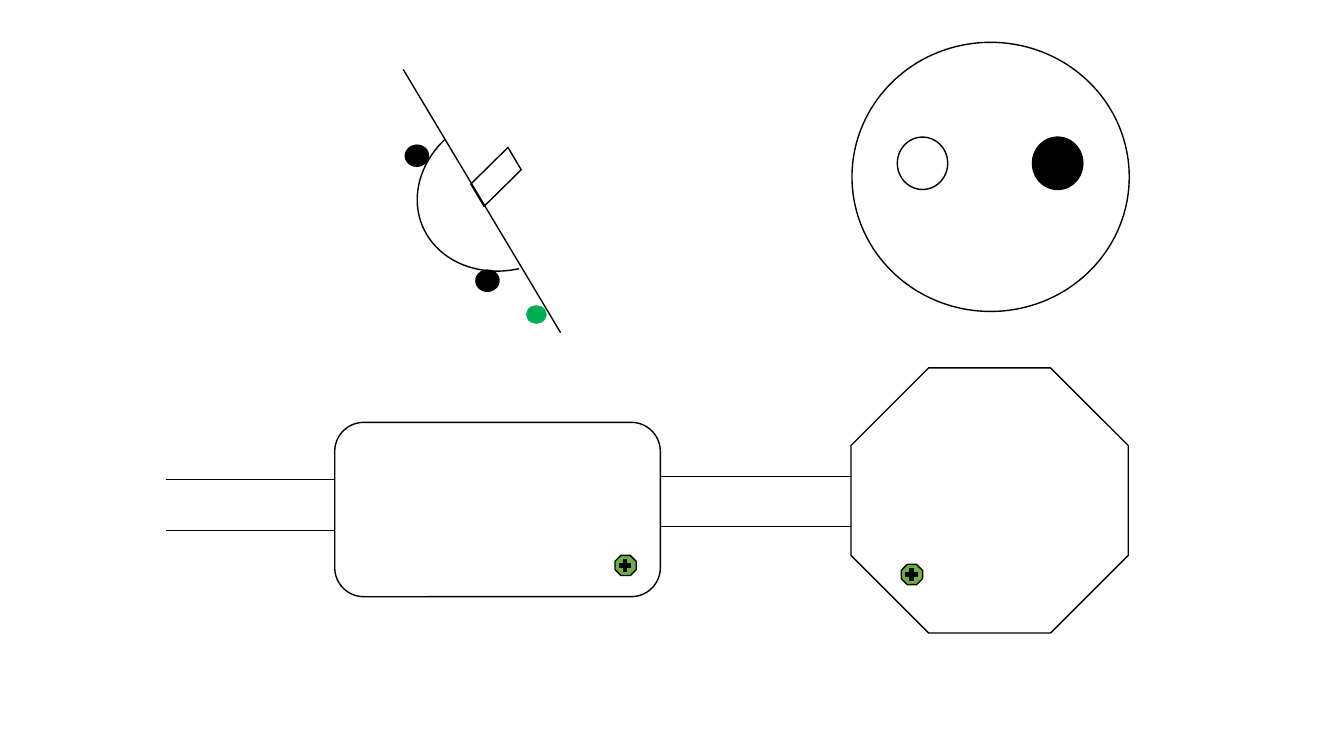
"""Draw a plan of linked rooms with a tilted dish and a round face plate."""
from lxml.etree import SubElement
from pptx import Presentation
from pptx.dml.color import RGBColor
from pptx.enum.shapes import MSO_CONNECTOR, MSO_SHAPE
from pptx.oxml.ns import qn
from pptx.util import Pt

PX = 9144
THEME = {
    "ink": RGBColor.from_string("000000"),
    "paper": RGBColor.from_string("FFFFFF"),
    "badge": RGBColor.from_string("70AD47"),
    "lamp": RGBColor.from_string("00B050"),
    "hair": 0.25,
    "thin": 0.5,
    "line": 1,
    "bold": 3,
}

deck = Presentation()
deck.slide_width, deck.slide_height = 1333 * PX, 750 * PX
slide = deck.slides.add_slide(deck.slide_layouts[6])


def form(kind, box, fill=None, edge="ink", width="line", turn=0):
    shape = slide.shapes.add_shape(kind, *[n * PX for n in box])
    shape.shadow.inherit = False
    shape.rotation = turn
    if fill:
        shape.fill.solid()
        shape.fill.fore_color.rgb = THEME[fill]
    else:
        shape.fill.background()
    shape.line.color.rgb = THEME[edge]
    shape.line.width = Pt(THEME[width])
    return shape


def rule(ends, width):
    line = slide.shapes.add_connector(MSO_CONNECTOR.STRAIGHT, *[n * PX for n in ends])
    line.line.color.rgb = THEME["ink"]
    line.line.width = Pt(THEME[width])
    SubElement(line._element.spPr, qn("a:effectLst"))


form(MSO_SHAPE.OVAL, (845, 42, 275, 267))
for left, fill in ((890, None), (1024, "ink")):
    form(MSO_SHAPE.OVAL, (left, 136, 50, 52), fill)

form(MSO_SHAPE.OCTAGON, (844, 365, 275, 263), "paper")
form(MSO_SHAPE.ROUNDED_RECTANGLE, (332, 419, 323, 173))
for start, end, rows in ((165, 332, (476, 526)), (655, 844, (473, 522))):
    for y in rows:
        rule((start, y, end, y), "thin")

for x, y in ((904, 570), (620, 561)):
    form(MSO_SHAPE.OCTAGON, (x - 10, y - 10, 21, 20), "badge")
    rule((x, y - 6, x, y + 6), "bold")
    rule((x - 6, y, x + 6, y), "bold")

dish = form(MSO_SHAPE.ARC, (412, 112, 181, 155), turn=157.7)
dish.adjustments[0], dish.adjustments[1] = 169.91, 37.02
rule((400, 69, 556, 330), "line")
form(MSO_SHAPE.PARALLELOGRAM, (463, 163, 58, 25), turn=315.4)
for left, top in ((472, 268), (402, 144)):
    form(MSO_SHAPE.OVAL, (left, top, 23, 21), "ink", turn=356)
form(MSO_SHAPE.OVAL, (522, 303, 20, 18), "lamp", "lamp", "hair")

deck.save("out.pptx")
